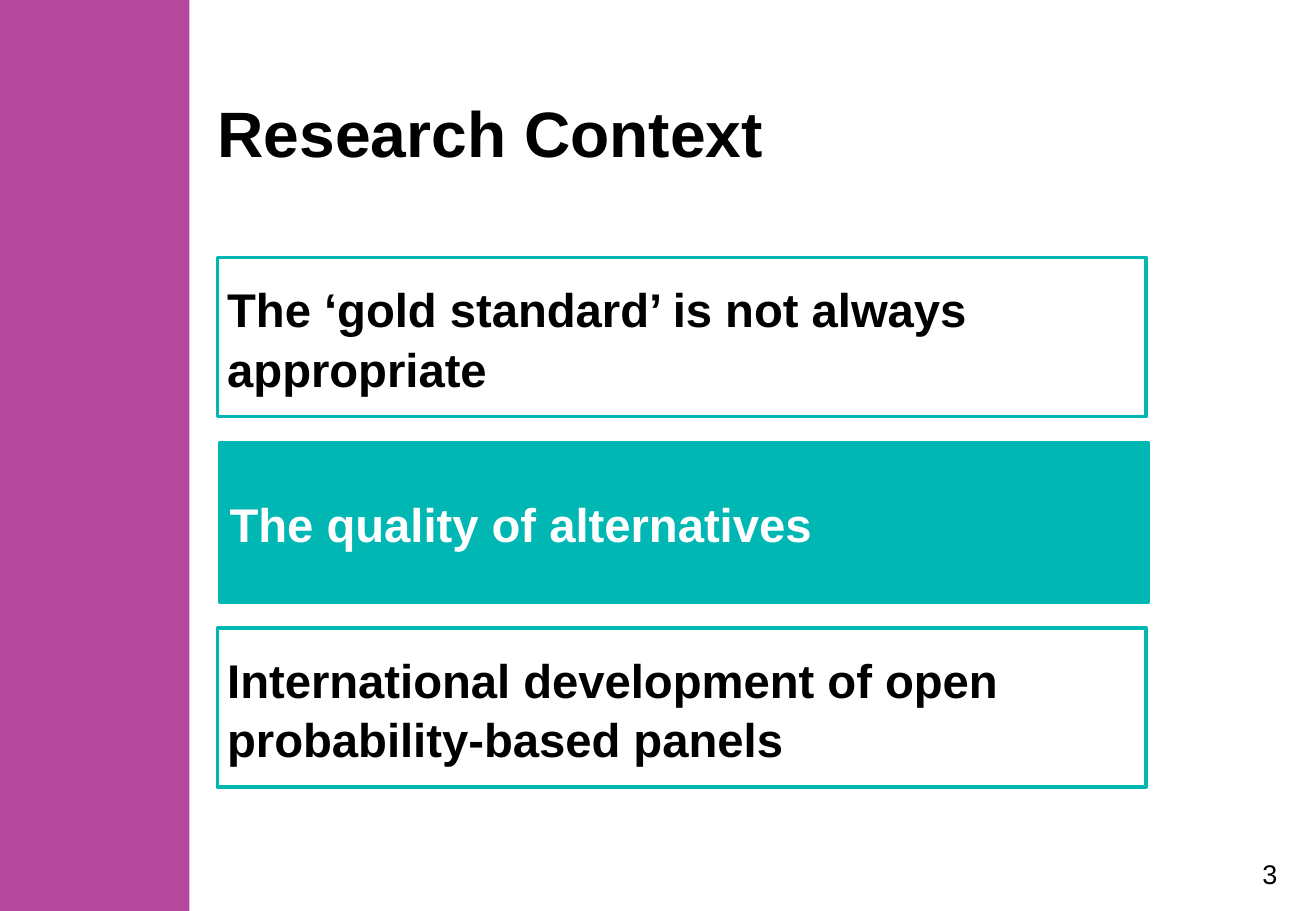
import pptx
import pptx.util
import pptx.dml.color
import pptx.enum.shapes
import pptx.enum.text

Inches = pptx.util.Inches
Pt = pptx.util.Pt
Align = pptx.enum.text.PP_ALIGN
Anchor = pptx.enum.text.MSO_ANCHOR

THEME = {
    "font": "Arial",
    "purple": "B4489B", "teal": "00B7B4", "white": "FFFFFF", "black": "000000",
    "title": 38, "body": 28, "number": 16, "line": 2.25, "leading": 1.05,
}
WIDTH, HEIGHT = 10.83, 7.5
LEFT = 1.79
TOP, STEP = 2.12, 1.525
BOX_W, BOX_H = 7.64, 1.31

deck = pptx.Presentation()
deck.slide_width = Inches(WIDTH)
deck.slide_height = Inches(HEIGHT)
slide = deck.slides.add_slide(deck.slide_layouts[6])


def add_bar(left, top, width, height, fill, line=None):
    """Add a flat rectangle, with an outline only if a line colour is given."""
    bar = slide.shapes.add_shape(
        pptx.enum.shapes.MSO_SHAPE.RECTANGLE,
        Inches(left), Inches(top), Inches(width), Inches(height))
    bar.shadow.inherit = False
    bar.fill.solid()
    bar.fill.fore_color.rgb = pptx.dml.color.RGBColor.from_string(THEME[fill])
    if line:
        bar.line.color.rgb = pptx.dml.color.RGBColor.from_string(THEME[line])
        bar.line.width = Pt(THEME["line"])
    else:
        bar.line.fill.background()
    return bar


def put_text(shape, text, size, color="black", bold=True, inset=0,
             anchor=Anchor.MIDDLE, align=Align.LEFT, leading=1.0):
    frame = shape.text_frame
    frame.word_wrap = True
    frame.vertical_anchor = anchor
    frame.margin_left = frame.margin_right = Inches(inset)
    frame.margin_top = frame.margin_bottom = Inches(inset)
    para = frame.paragraphs[0]
    para.alignment = align
    para.line_spacing = leading
    run = para.add_run()
    run.text = text
    run.font.name = THEME["font"]
    run.font.size = Pt(THEME[size])
    run.font.bold = bold
    run.font.color.rgb = pptx.dml.color.RGBColor.from_string(THEME[color])


# Side band, page number and title
add_bar(0, 0, 1.56, HEIGHT, "purple")

number = slide.shapes.add_textbox(Inches(10.2), Inches(7.06), Inches(0.5), Inches(0.27))
put_text(number, "3", "number", bold=False, anchor=Anchor.TOP, align=Align.CENTER)

title = slide.shapes.add_textbox(Inches(LEFT), Inches(0.5), Inches(7.8), Inches(0.9))
put_text(title, "Research Context", "title", anchor=Anchor.BOTTOM)

# Stacked topics: text, fill, text colour, shift to the right
topics = [
    ("The ‘gold standard’ is not always appropriate", "white", "black", 0),
    ("The quality of alternatives", "teal", "white", 0.02),
    ("International development of open probability-based panels", "white", "black", 0),
]
for row, (text, fill, color, shift) in enumerate(topics):
    box = add_bar(LEFT + shift, TOP + row * STEP, BOX_W, BOX_H, fill, "teal")
    put_text(box, text, "body", color, inset=0.08, leading=THEME["leading"])

deck.save("out.pptx")
